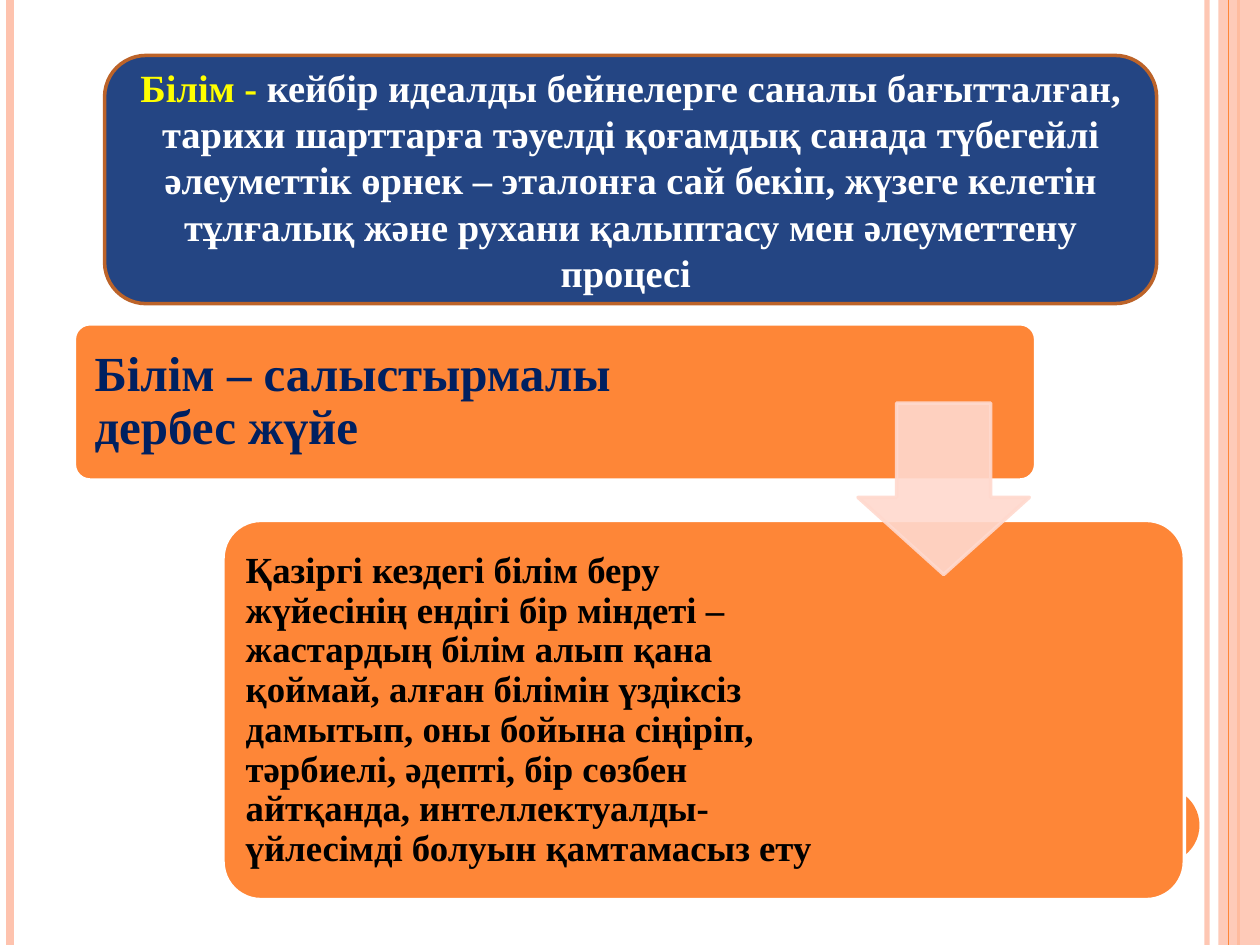
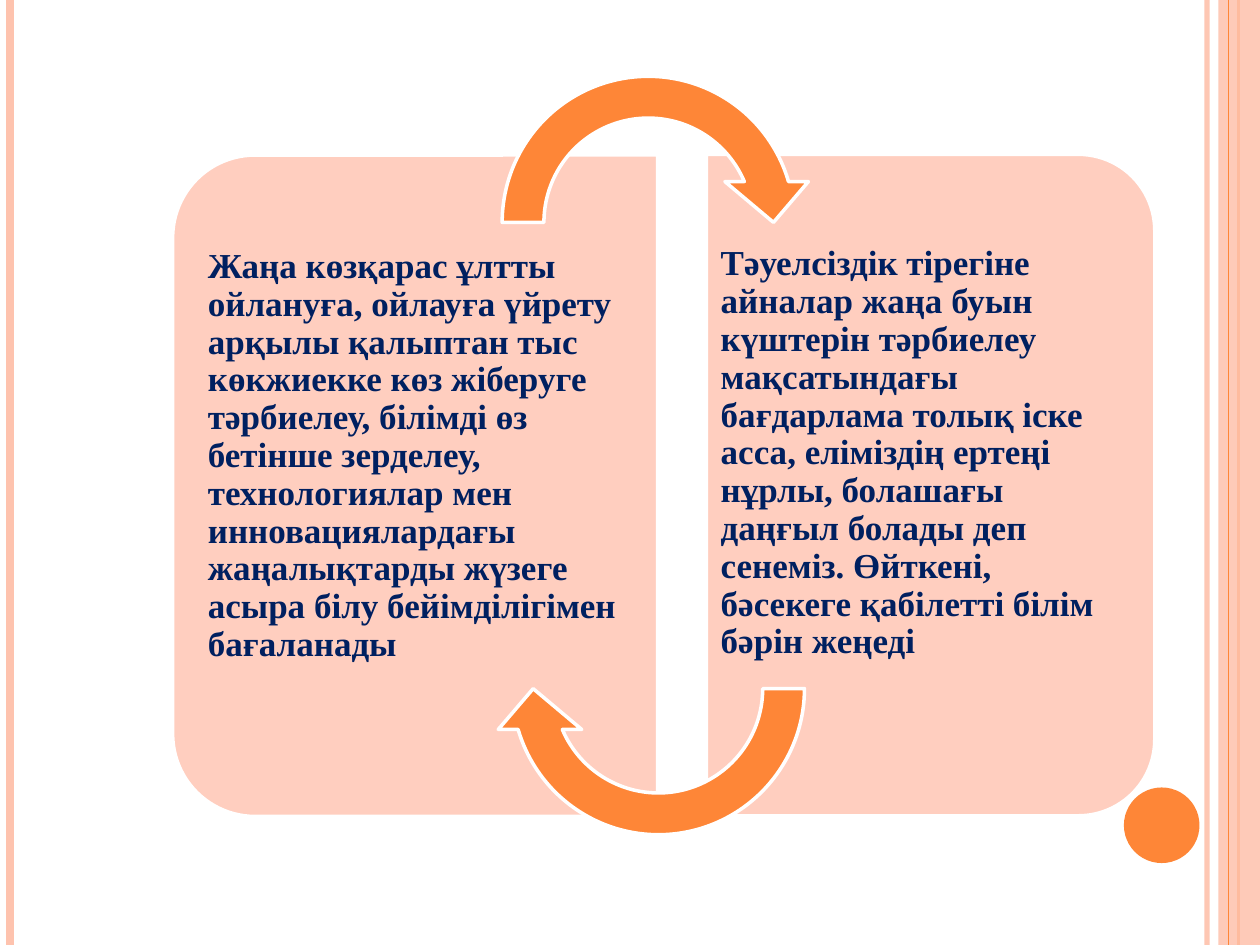
from dataclasses import dataclass

from lxml.etree import SubElement
from pptx import Presentation
from pptx.dml.color import RGBColor
from pptx.enum.shapes import MSO_CONNECTOR, MSO_SHAPE
from pptx.enum.text import MSO_ANCHOR, PP_ALIGN
from pptx.oxml.ns import qn
from pptx.util import Inches, Pt


@dataclass(frozen=True)
class Theme:
    font: str = "Times New Roman"
    orange: str = "FE8637"
    stripe: str = "FEC3AE"
    peach: str = "FFCEBF"
    arrow: str = "FFD9CE"
    blue: str = "244583"
    brown: str = "BC6329"
    navy: str = "002060"
    yellow: str = "FFFF00"
    white: str = "FFFFFF"
    black: str = "000000"
    outline: float = 2
    heading_size: float = 28
    definition_size: float = 22
    task_size: float = 21
    panel_size: float = 20


THEME = Theme()
WIDTH, HEIGHT = 10, 7.5


@dataclass(frozen=True)
class Box:
    left: float
    top: float
    width: float
    height: float

    def lengths(self):
        return [Inches(v) for v in (self.left, self.top, self.width, self.height)]


@dataclass(frozen=True)
class Stripe:
    x: float
    weight: float
    color: str
    opacity: int = 100


@dataclass(frozen=True)
class Panel:
    """A column rounded on its outer side, with its text area."""
    frame: Box
    rotation: int
    text_area: Box
    left_inset: float
    right_inset: float
    text: str


@dataclass(frozen=True)
class CycleArrow:
    frame: Box
    rotation: int


OUTER_STRIPES = (
    Stripe(9.58, 3, THEME.stripe, 93),
    Stripe(0.08, 4.5, THEME.stripe),
    Stripe(9.83, 1.5, THEME.orange),
)
BAND_STRIPE = Stripe(9.75, 0.75, THEME.orange)
BAND = Box(9.67, 0, 0.33, HEIGHT)
DOT = Box(8.92, 6.25, 0.6, 0.6)

PANELS = (
    Panel(Box(0.67, 1.93, 5.25, 3.85), 270, Box(1.57, 1.42, 3.66, 4.88), 0.08, 0.12,
          "Жаңа көзқарас ұлтты ойлануға, ойлауға үйрету арқылы қалыптан тыс "
          "көкжиекке көз жіберуге тәрбиелеу, білімді өз бетінше зерделеу, "
          "технологиялар мен инновациялардағы жаңалықтарды жүзеге асыра білу "
          "бейімділігімен бағаланады"),
    Panel(Box(4.76, 2.07, 5.25, 3.56), 90, Box(5.6, 1.4, 3.39, 4.91), 0.12, 0.08,
          "Тәуелсіздік тірегіне айналар жаңа буын күштерін тәрбиелеу "
          "мақсатындағы бағдарлама толық іске асса, еліміздің ертеңі нұрлы, "
          "болашағы даңғыл болады деп сенеміз. Өйткені, бәсекеге қабілетті "
          "білім бәрін жеңеді"),
)
CYCLE_ARROWS = (
    CycleArrow(Box(3.82, 0.44, 2.65, 2.65), 0),
    CycleArrow(Box(3.9, 4.14, 2.65, 2.65), 180),
)
CYCLE_ADJUSTMENTS = (0.125, 11.42, 204.58, 108, 0.125)


def set_opacity(item, percent: int) -> None:
    """Apply one opacity to every colour of a shape or line."""
    for color in list(item._element.spPr.iter(qn("a:srgbClr"))):
        SubElement(color, qn("a:alpha"), val=str(percent * 1000))


def add_stripe(slide, stripe: Stripe) -> None:
    x = Inches(stripe.x)
    line = slide.shapes.add_connector(MSO_CONNECTOR.STRAIGHT, x, 0, x, Inches(HEIGHT))
    line.line.color.rgb = RGBColor.from_string(stripe.color)
    line.line.width = Pt(stripe.weight)
    if stripe.opacity < 100:
        set_opacity(line, stripe.opacity)
    SubElement(line._element.spPr, qn("a:effectLst"))


def add_figure(slide, kind: MSO_SHAPE, box: Box, fill: str, *, outline: str = "",
               adjustments: tuple = (), rotation: int = 0, opacity: int = 100):
    figure = slide.shapes.add_shape(kind, *box.lengths())
    figure.shadow.inherit = False
    figure.rotation = rotation
    for index, value in enumerate(adjustments):
        figure.adjustments[index] = value
    figure.fill.solid()
    figure.fill.fore_color.rgb = RGBColor.from_string(fill)
    if outline:
        figure.line.color.rgb = RGBColor.from_string(outline)
        figure.line.width = Pt(THEME.outline)
    else:
        figure.line.fill.background()
    if opacity < 100:
        set_opacity(figure, opacity)
    return figure


def write(frame, *parts: tuple[str, str], size: float, align=PP_ALIGN.LEFT,
          anchor=MSO_ANCHOR.MIDDLE, spacing: float = 0.9,
          insets: tuple = (0.1, 0.05, 0.1, 0.05)) -> None:
    """Write (text, colour) parts as one bold paragraph; insets run left, top, right, bottom."""
    frame.word_wrap = True
    frame.vertical_anchor = anchor
    (frame.margin_left, frame.margin_top,
     frame.margin_right, frame.margin_bottom) = [Inches(v) for v in insets]
    paragraph = frame.paragraphs[0]
    paragraph.alignment = align
    paragraph.line_spacing = spacing
    for text, color in parts:
        run = paragraph.add_run()
        run.text = text
        run.font.name = THEME.font
        run.font.size = Pt(size)
        run.font.bold = True
        run.font.color.rgb = RGBColor.from_string(color)


def add_text(slide, box: Box, text: str, color: str, **text_format) -> None:
    area = slide.shapes.add_textbox(*box.lengths())
    write(area.text_frame, (text, color), **text_format)


def new_slide(deck):
    """Add a blank slide with the shared side stripes, band and dot."""
    slide = deck.slides.add_slide(deck.slide_layouts[6])
    for stripe in OUTER_STRIPES:
        add_stripe(slide, stripe)
    add_figure(slide, MSO_SHAPE.RECTANGLE, BAND, THEME.stripe, opacity=87)
    add_stripe(slide, BAND_STRIPE)
    add_figure(slide, MSO_SHAPE.OVAL, DOT, THEME.orange)
    return slide


def build_definition(deck) -> None:
    slide = new_slide(deck)
    definition = add_figure(slide, MSO_SHAPE.ROUNDED_RECTANGLE, Box(0.83, 0.44, 8.35, 1.97),
                            THEME.blue, outline=THEME.brown)
    write(definition.text_frame,
          ("Білім - ", THEME.yellow),
          ("кейбір идеалды бейнелерге саналы бағытталған, тарихи шарттарға "
           "тəуелді қоғамдық санада түбегейлі əлеуметтік өрнек – эталонға сай "
           "бекіп, жүзеге келетін тұлғалық жəне рухани қалыптасу мен "
           "əлеуметтену процесі ", THEME.white),
          size=THEME.definition_size, align=PP_ALIGN.CENTER, spacing=1.0)

    for step in (Box(0.59, 2.57, 7.63, 1.24), Box(1.77, 4.13, 7.63, 3.01)):
        add_figure(slide, MSO_SHAPE.ROUNDED_RECTANGLE, step, THEME.orange,
                   outline=THEME.white, adjustments=(0.1,))
    add_text(slide, Box(0.63, 2.61, 5.52, 1.17), "Білім – салыстырмалы дербес жүйе",
             THEME.navy, size=THEME.heading_size, insets=(0.12,) * 4)
    add_text(slide, Box(1.86, 4.22, 4.75, 2.84),
             "Қазіргі кездегі білім беру жүйесінің ендігі бір міндеті – "
             "жастардың білім алып қана қоймай, алған білімін үздіксіз дамытып, "
             "оны бойына сіңіріп, тәрбиелі, әдепті, бір сөзбен айтқанда, "
             "интеллектуалды-үйлесімді болуын қамтамасыз ету",
             THEME.black, size=THEME.task_size, insets=(0.09,) * 4)
    add_figure(slide, MSO_SHAPE.DOWN_ARROW, Box(6.81, 3.2, 1.36, 1.36), THEME.arrow,
               outline=THEME.arrow, adjustments=(0.55, 0.45), opacity=90)


def build_cycle(deck) -> None:
    slide = new_slide(deck)
    for panel in PANELS:
        add_figure(slide, MSO_SHAPE.ROUND_2_SAME_RECTANGLE, panel.frame, THEME.peach,
                   outline=THEME.white, adjustments=(0.17, 0), rotation=panel.rotation)
        add_text(slide, panel.text_area, panel.text, THEME.navy, size=THEME.panel_size,
                 anchor=MSO_ANCHOR.TOP,
                 insets=(panel.left_inset, 0.55, panel.right_inset, 0.14))
    for arrow in CYCLE_ARROWS:
        add_figure(slide, MSO_SHAPE.CIRCULAR_ARROW, arrow.frame, THEME.orange,
                   outline=THEME.white, adjustments=CYCLE_ADJUSTMENTS,
                   rotation=arrow.rotation)


def main() -> None:
    deck = Presentation()
    deck.slide_width, deck.slide_height = Inches(WIDTH), Inches(HEIGHT)
    build_definition(deck)
    build_cycle(deck)
    deck.save("out.pptx")


if __name__ == "__main__":
    main()
